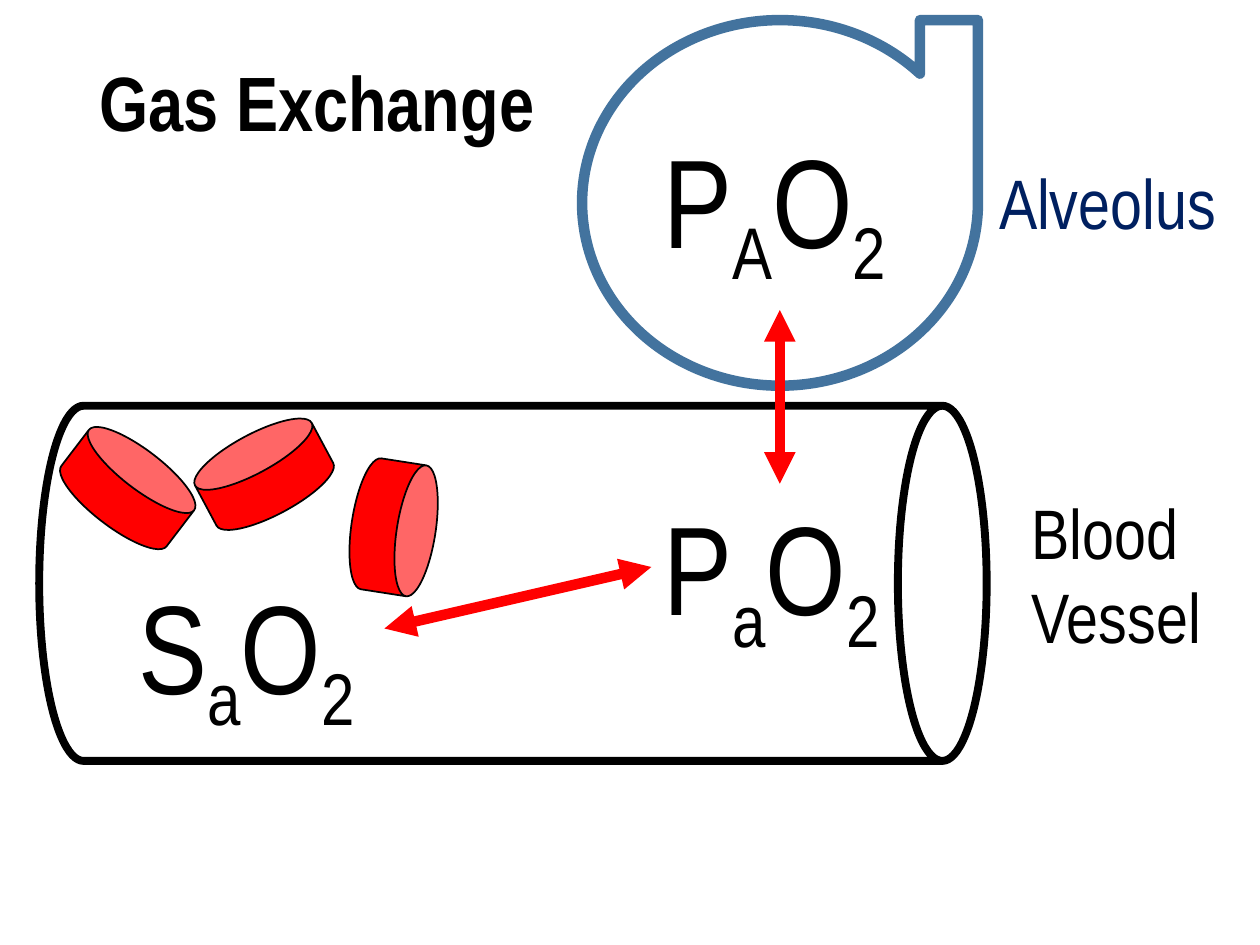
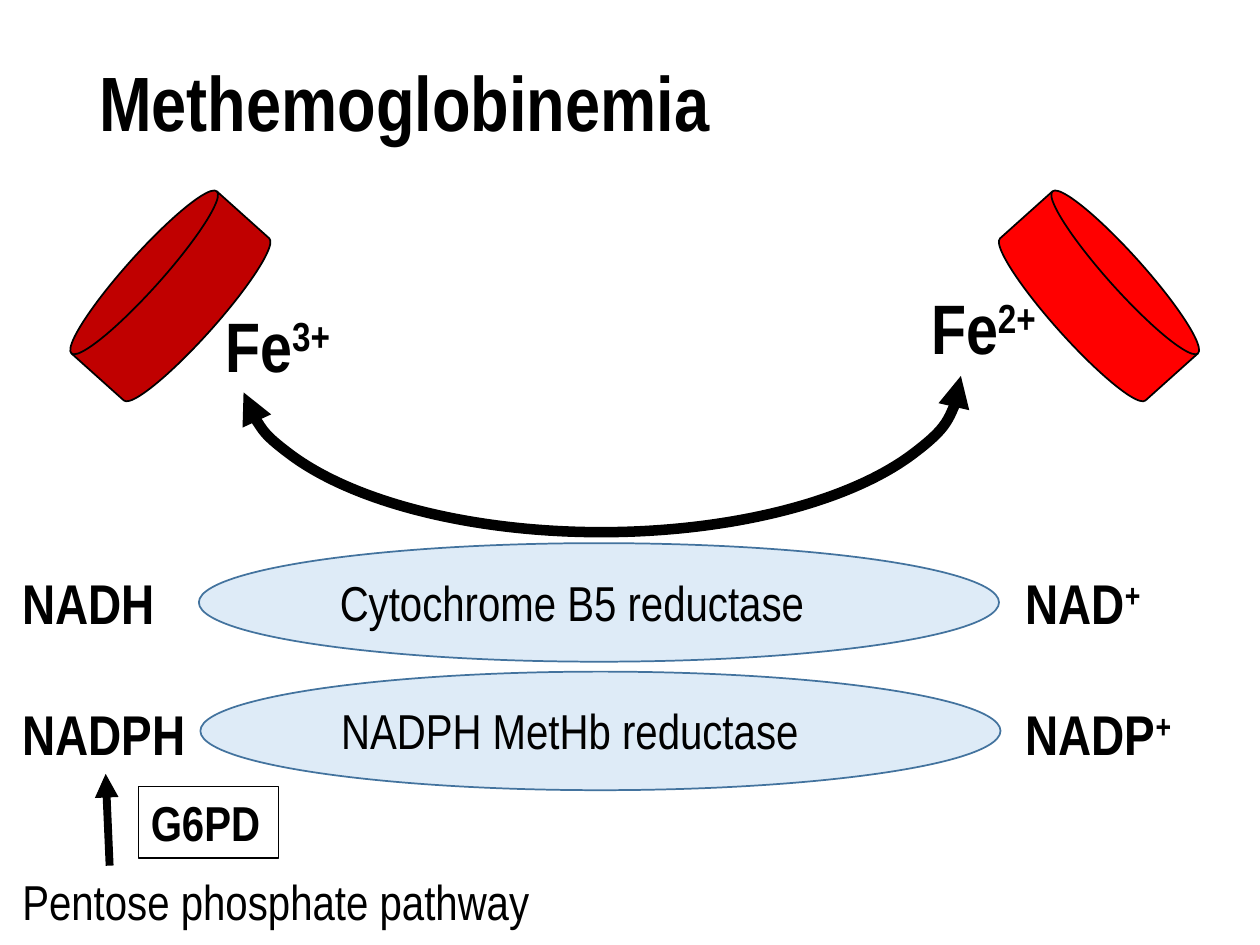
from pptx import Presentation
from pptx.dml.color import RGBColor
from pptx.enum.shapes import MSO_CONNECTOR, MSO_SHAPE
from pptx.enum.text import MSO_ANCHOR, MSO_AUTO_SIZE, PP_ALIGN
from pptx.oxml.ns import qn
from pptx.util import Cm, Pt
from lxml import etree

CAN = MSO_SHAPE.CAN
TAPE = MSO_SHAPE.FLOWCHART_SEQUENTIAL_ACCESS_STORAGE
DISK = MSO_SHAPE.FLOWCHART_MAGNETIC_DISK
ARC = MSO_SHAPE.ARC
OVAL = MSO_SHAPE.OVAL
STRAIGHT = MSO_CONNECTOR.STRAIGHT
TOP, MIDDLE = MSO_ANCHOR.TOP, MSO_ANCHOR.MIDDLE
FIT = MSO_AUTO_SIZE.SHAPE_TO_FIT_TEXT
LEFT = PP_ALIGN.LEFT

FONT = "Arial Narrow"
BLACK, RED, DARK_RED = "000000", "FF0000", "C00000"
STEEL, PALE_BLUE, NAVY = "43739E", "DEEBF7", "002060"
SUBSCRIPT, SUPERSCRIPT = -25000, 30000


def color(value):
    return RGBColor.from_string(value)


def write(frame, text, size=28, ink=BLACK, bold=False, shift=0, spacing=None):
    """Every second part between bars is raised or lowered by shift."""
    para = frame.paragraphs[0]
    para.alignment = LEFT
    if spacing:
        para.line_spacing = spacing
    for row, line in enumerate(text.split("\n")):
        if row:
            para.add_line_break()
        for index, part in enumerate(line.split("|")):
            if not part:
                continue
            span = para.add_run()
            span.text = part
            span.font.name = FONT
            span.font.size = Pt(size)
            span.font.bold = bold
            span.font.color.rgb = color(ink)
            if index % 2:
                span.font._element.set("baseline", str(shift))


class Sketch:
    def __init__(self):
        self.deck = Presentation()
        self.deck.slide_width = Cm(25.4)
        self.deck.slide_height = Cm(19.05)
        self.page = None

    def new_page(self, title):
        self.page = self.deck.slides.add_slide(self.deck.slide_layouts[6])
        self.label(title, 1.75, 1.02, 21.89, 2.26, wrap=True, anchor=MIDDLE,
                   size=44, bold=True, spacing=0.9)

    def label(self, text, left, top, width, height, wrap=False, anchor=TOP,
              border=None, **style):
        box = self.page.shapes.add_textbox(Cm(left), Cm(top), Cm(width), Cm(height))
        frame = box.text_frame
        frame.word_wrap = wrap
        frame.vertical_anchor = anchor
        if not wrap:
            frame.auto_size = FIT
        if border:
            self.outline(box.line, BLACK, border)
        write(frame, text, **style)

    def outline(self, line, ink, weight, head=False, tail=False):
        line.color.rgb = color(ink)
        line.width = Pt(weight)
        for tag, wanted in (("a:headEnd", head), ("a:tailEnd", tail)):
            if wanted:
                etree.SubElement(line._get_or_add_ln(), qn(tag), type="triangle")

    def figure(self, preset, left, top, width, height, fill=None, ink=BLACK,
               weight=1, turn=0, adjust=(), mirror=False, arrows=False):
        shape = self.page.shapes.add_shape(
            preset, Cm(left), Cm(top), Cm(width), Cm(height))
        shape.shadow.inherit = False
        shape.rotation = turn
        for index, value in enumerate(adjust):
            shape.adjustments[index] = value
        if fill:
            shape.fill.solid()
            shape.fill.fore_color.rgb = color(fill)
        else:
            shape.fill.background()
        if mirror:
            shape.element.spPr.get_or_add_xfrm().set("flipH", "1")
        self.outline(shape.line, ink, weight, arrows, arrows)

    def arrow(self, start, end, ink=BLACK, weight=4.5, both=False):
        link = self.page.shapes.add_connector(
            STRAIGHT, *(Cm(value) for value in (*start, *end)))
        self.outline(link.line, ink, weight, both, True)
        etree.SubElement(link.element.spPr, qn("a:effectLst"))


def gas_exchange(sketch):
    sketch.new_page("Gas Exchange")
    sketch.figure(CAN, 6.76, 2.21, 7.16, 19.1, weight=4.5, turn=90)
    sketch.figure(TAPE, 12.04, 0.1, 7.37, 7.98, ink=STEEL, weight=6, turn=270)
    for left, top, turn in ((1.24, 8.99, 37.4), (6.6, 9.78, 98.8), (3.99, 8.71, 331.8)):
        sketch.figure(CAN, left, top, 2.67, 1.7, fill=RED, turn=turn, adjust=[0.46])
    for text, left, top in (("P|A|O|2", 13.13, 2.34), ("P|a|O|2", 13.13, 9.75),
                            ("S|a|O|2", 2.54, 11.33)):
        sketch.label(text, left, top, 5.18, 3.33, size=72, shift=SUBSCRIPT)
    for start, end in (((15.72, 9.75), (15.72, 6.25)), ((7.75, 12.67), (13.13, 11.43))):
        sketch.arrow(start, end, ink=RED, weight=6, both=True)
    sketch.label("Alveolus", 19.89, 3.1, 4.93, 1.96, size=40, ink=NAVY)
    sketch.label("Blood\nVessel", 20.55, 9.75, 4.11, 3.68, size=40)


def methemoglobinemia(sketch):
    sketch.new_page("Methemoglobinemia")
    sketch.figure(ARC, 8.97, 0.33, 6.3, 14.5, weight=6, turn=90,
                  adjust=[162, 52.42], arrows=True)
    for left, fill, turn, mirror in ((1.24, DARK_RED, 311.9, False),
                                     (19.96, RED, 48.1, True)):
        sketch.figure(DISK, left, 4.9, 4.39, 2.13, fill=fill, turn=turn, mirror=mirror)
    for text, left, top in (("Fe|3+", 4.29, 5.97), ("Fe|2+", 18.52, 5.61)):
        sketch.label(text, left, top, 2.82, 1.96, size=40, bold=True, shift=SUPERSCRIPT)

    for enzyme, left, top, width in (("Cytochrome B5 reductase", 4.01, 10.95, 9.96),
                                     ("NADPH MetHb reductase", 4.04, 13.54, 9.83)):
        sketch.figure(OVAL, left, top, 16.13, 2.39, fill=PALE_BLUE, ink=STEEL)
        sketch.label(enzyme, left + 2.59, top + 0.46, width, 1.45)

    for text, left, top, width in (("NADH", 0.2, 11.33, 3.23), ("NAD|+", 20.42, 11.33, 2.92),
                                   ("NADPH", 0.2, 13.97, 3.84), ("NADP|+", 20.42, 13.97, 3.66)):
        sketch.label(text, left, top, width, 1.63, size=32, bold=True, shift=SUPERSCRIPT)

    sketch.label("Pentose phosphate pathway", 0.2, 17.45, 10.82, 1.45)
    sketch.arrow((2.21, 17.45), (2.13, 15.6))
    sketch.label("G6PD", 2.79, 15.85, 2.82, 1.45, border=0.75, bold=True)


def main():
    sketch = Sketch()
    gas_exchange(sketch)
    methemoglobinemia(sketch)
    sketch.deck.save("out.pptx")


if __name__ == "__main__":
    main()
